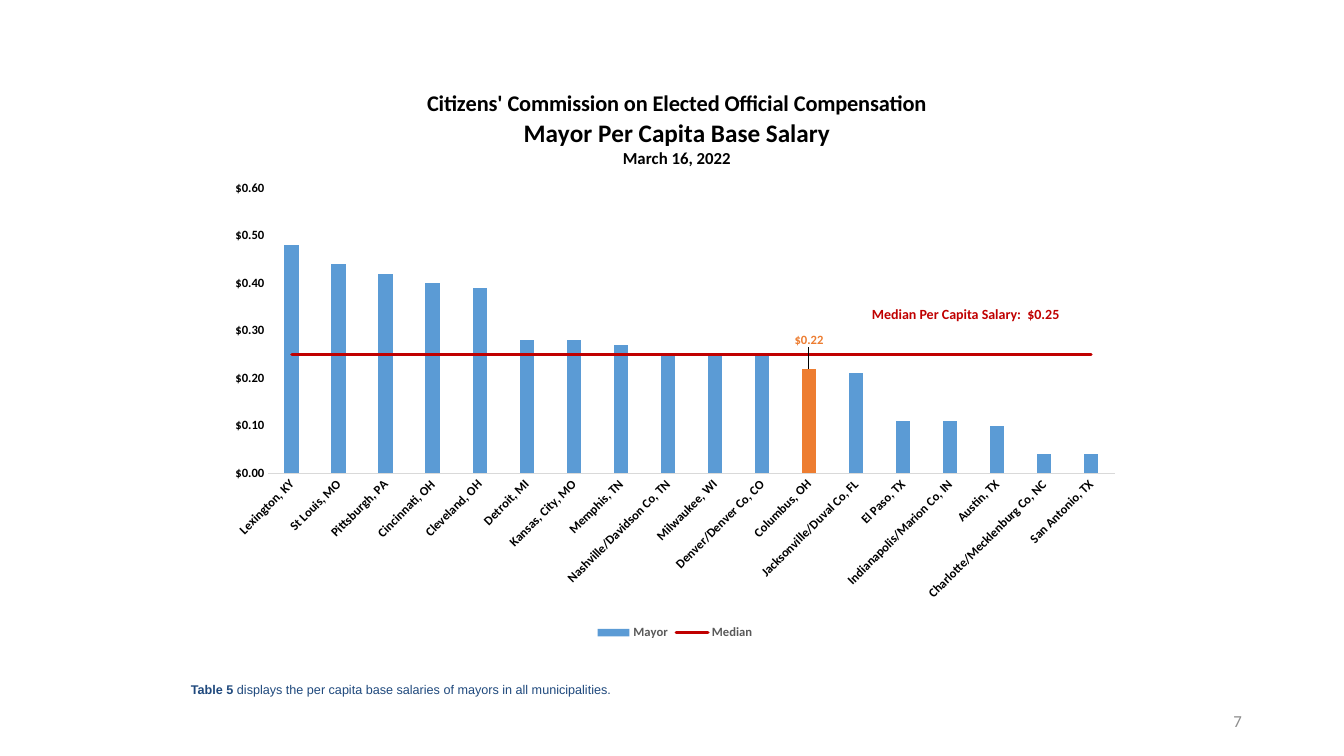
from dataclasses import dataclass

from lxml import etree
from pptx import Presentation
from pptx import util as u
from pptx.chart.data import CategoryChartData
from pptx.dml.color import RGBColor
from pptx.enum import chart as charts, shapes, text
from pptx.oxml import parse_xml
from pptx.oxml.ns import qn

PX = 914400 / 100.8
BLACK = RGBColor(0x00, 0x00, 0x00)
WHITE = RGBColor(0xFF, 0xFF, 0xFF)
BLUE = RGBColor(0x5B, 0x9B, 0xD5)
ORANGE = RGBColor(0xED, 0x7D, 0x31)
RED = RGBColor(0xC0, 0x00, 0x00)
NAVY = RGBColor(0x1F, 0x49, 0x7D)
DARK_GREY = RGBColor(0x59, 0x59, 0x59)
MID_GREY = RGBColor(0x8C, 0x8C, 0x8C)
LIGHT_GREY = RGBColor(0xD9, 0xD9, 0xD9)
CHART_NS = "http://schemas.openxmlformats.org/drawingml/2006/chart"
C15_NS = "http://schemas.organizer.com/office/drawing/2012/chart"
DOLLARS = '"$"#,##0.00'
HIGHLIGHT = "Columbus, OH"
MEDIAN = 0.25
SALARIES = {
    "Lexington, KY": 0.48,
    "St Louis, MO": 0.44,
    "Pittsburgh, PA": 0.42,
    "Cincinnati, OH": 0.40,
    "Cleveland, OH": 0.39,
    "Detroit, MI": 0.28,
    "Kansas, City, MO": 0.28,
    "Memphis, TN": 0.27,
    "Nashville/Davidson Co, TN": 0.25,
    "Milwaukee, WI": 0.25,
    "Denver/Denver Co, CO": 0.25,
    "Columbus, OH": 0.22,
    "Jacksonville/Duval Co, FL": 0.21,
    "El Paso, TX": 0.11,
    "Indianapolis/Marion Co, IN": 0.11,
    "Austin, TX": 0.10,
    "Charlotte/Mecklenburg Co, NC": 0.04,
    "San Antonio, TX": 0.04,
}
TITLE_LINES = [
    ("Citizens' Commission on Elected Official Compensation", 16),
    ("Mayor Per Capita Base Salary", 18),
    ("March 16, 2022", 12),
]


@dataclass(frozen=True)
class Box:
    left: int
    top: int
    width: int
    height: int

    def emu(self) -> tuple:
        return tuple(px(v) for v in (self.left, self.top, self.width, self.height))


CHART_BOX = Box(217, 65, 916, 579)


def px(value: int) -> u.Emu:
    return u.Emu(round(value * PX))


def style(font, size: int, color: RGBColor, bold: bool = True, name: str = "Calibri") -> None:
    font.size, font.bold, font.name = u.Pt(size), bold, name
    font.color.rgb = color


def add_text(paragraph, words: str, *, size: int, color: RGBColor,
             bold: bool = True, name: str = "Calibri") -> None:
    run = paragraph.add_run()
    run.text = words
    style(run.font, size, color, bold, name)


def add_box(slide, box: Box, anchor, inset: bool = True):
    """Add a plain white rectangle and return its first paragraph."""
    shape = slide.shapes.add_shape(shapes.MSO_SHAPE.RECTANGLE, *box.emu())
    shape.shadow.inherit = False
    shape.fill.solid()
    shape.fill.fore_color.rgb = WHITE
    shape.line.fill.background()
    frame = shape.text_frame
    frame.word_wrap = True
    frame.vertical_anchor = anchor
    if not inset:
        frame.margin_left = frame.margin_top = frame.margin_right = frame.margin_bottom = 0
    paragraph = frame.paragraphs[0]
    paragraph.alignment = text.PP_ALIGN.LEFT
    return paragraph


def set_layout(parent, index: int, inner: bool = False, **fractions: float) -> None:
    """Place a chart part by fractions of the chart area."""
    for old in parent.findall(qn("c:layout")):
        parent.remove(old)
    parts = ['<c:layoutTarget val="inner"/>'] if inner else []
    if "w" in fractions or "mode" not in fractions:
        parts += [f'<c:{axis}Mode val="edge"/>' for axis in "xy"]
    parts += [f'<c:{key} val="{value}"/>' for key, value in fractions.items() if key != "mode"]
    parent.insert(index, parse_xml(
        f'<c:layout xmlns:c="{CHART_NS}"><c:manualLayout>{"".join(parts)}'
        '</c:manualLayout></c:layout>'))


def turn_median_into_line(chart) -> None:
    """Move the second bar series into a line chart on the same axes."""
    bars = chart.plots[0]._element
    series = bars.findall(qn("c:ser"))[1]
    for child in series.findall(qn("c:invertIfNegative")):
        series.remove(child)
    line = parse_xml(
        f'<c:lineChart xmlns:c="{CHART_NS}"><c:grouping val="standard"/>'
        '<c:varyColors val="0"/><c:marker val="1"/></c:lineChart>')
    line.insert(2, series)
    for axis in bars.findall(qn("c:axId")):
        etree.SubElement(line, qn("c:axId")).set("val", axis.get("val"))
    bars.addnext(line)
    median = chart.plots[1].series[0]
    median.smooth = False
    median.marker.style = charts.XL_MARKER_STYLE.NONE
    median.format.line.color.rgb = RED
    median.format.line.width = u.Pt(2.25)
    median.format.line._ln.set("cap", "rnd")


def format_axes(chart) -> None:
    for axis in (chart.category_axis, chart.value_axis):
        axis.has_major_gridlines = False
        axis.major_tick_mark = axis.minor_tick_mark = charts.XL_TICK_MARK.NONE
        style(axis.tick_labels.font, 9, BLACK)
    cities, dollars = chart.category_axis, chart.value_axis
    cities.format.line.color.rgb = LIGHT_GREY
    cities.format.line.width = u.Pt(0.75)
    cities._element.find(qn("c:txPr")).find(qn("a:bodyPr")).set("rot", "-2700000")
    dollars.format.line.fill.background()
    dollars.minimum_scale, dollars.maximum_scale, dollars.major_unit = 0, 0.6, 0.1
    dollars.tick_labels.number_format = DOLLARS
    dollars.tick_labels.number_format_is_linked = False


def highlight_city(mayor) -> None:
    """Colour one bar and lift its label, with a leader line."""
    point = mayor.points[list(SALARIES).index(HIGHLIGHT)]
    point.format.fill.solid()
    point.format.fill.fore_color.rgb = ORANGE
    style(point.data_label.font, 9, ORANGE)
    point.data_label.position = charts.XL_LABEL_POSITION.OUTSIDE_END
    labels = mayor.data_labels
    labels.show_value = False
    set_layout(labels._element.find(qn("c:dLbl")), 1, mode="offset", x=0, y=-0.03)
    labels._element.append(parse_xml(
        f'<c:extLst xmlns:c="{CHART_NS}"><c:ext xmlns:c15="{C15_NS}" '
        'uri="{CE6537A1-D6FC-4f65-9D91-7224C49458BB}">'
        '<c15:showLeaderLines val="1"/></c:ext></c:extLst>'))


def add_salary_chart(slide) -> None:
    data = CategoryChartData(number_format=DOLLARS)
    data.categories = list(SALARIES)
    data.add_series("Mayor", list(SALARIES.values()))
    data.add_series("Median", [MEDIAN] * len(SALARIES))
    chart = slide.shapes.add_chart(
        charts.XL_CHART_TYPE.COLUMN_CLUSTERED, *CHART_BOX.emu(), data).chart
    style(chart.font, 10, BLACK, bold=False)

    bars = chart.plots[0]
    bars.gap_width, bars.overlap, bars.vary_by_categories = 219, -27, False
    mayor = bars.series[0]
    mayor.format.fill.solid()
    mayor.format.fill.fore_color.rgb = BLUE
    highlight_city(mayor)
    turn_median_into_line(chart)
    format_axes(chart)
    set_layout(bars._element.getparent(), 0, inner=True, x=0.056, y=0.213, w=0.924, h=0.492)

    chart.has_title = True
    title = chart.chart_title
    for index, (words, size) in enumerate(TITLE_LINES):
        frame = title.text_frame
        paragraph = frame.add_paragraph() if index else frame.paragraphs[0]
        add_text(paragraph, words, size=size, color=BLACK)
    set_layout(title._element, 1, x=0.226, y=0.036)

    chart.has_legend = True
    chart.legend.position = charts.XL_LEGEND_POSITION.BOTTOM
    chart.legend.include_in_layout = False
    style(chart.legend.font, 9, DARK_GREY)


def main() -> None:
    presentation = Presentation()
    presentation.slide_width, presentation.slide_height = px(1344), px(756)
    slide = presentation.slides.add_slide(presentation.slide_layouts[6])

    number = add_box(slide, Box(950, 701, 302, 40), text.MSO_ANCHOR.MIDDLE)
    number.alignment = text.PP_ALIGN.RIGHT
    add_text(number, "7", size=12, color=MID_GREY, bold=False)

    add_salary_chart(slide)

    median = add_box(slide, Box(862, 301, 241, 27), text.MSO_ANCHOR.TOP)
    add_text(median, "Median Per Capita Salary:  $0.25", size=10, color=RED)

    note = add_box(slide, Box(191, 682, 549, 19), text.MSO_ANCHOR.TOP, inset=False)
    add_text(note, "Table 5 ", size=9, color=NAVY, name="Arial")
    add_text(note, "displays the per capita base salaries of mayors in all municipalities.",
             size=9, color=NAVY, bold=False, name="Arial")
    presentation.save("out.pptx")


if __name__ == "__main__":
    main()
